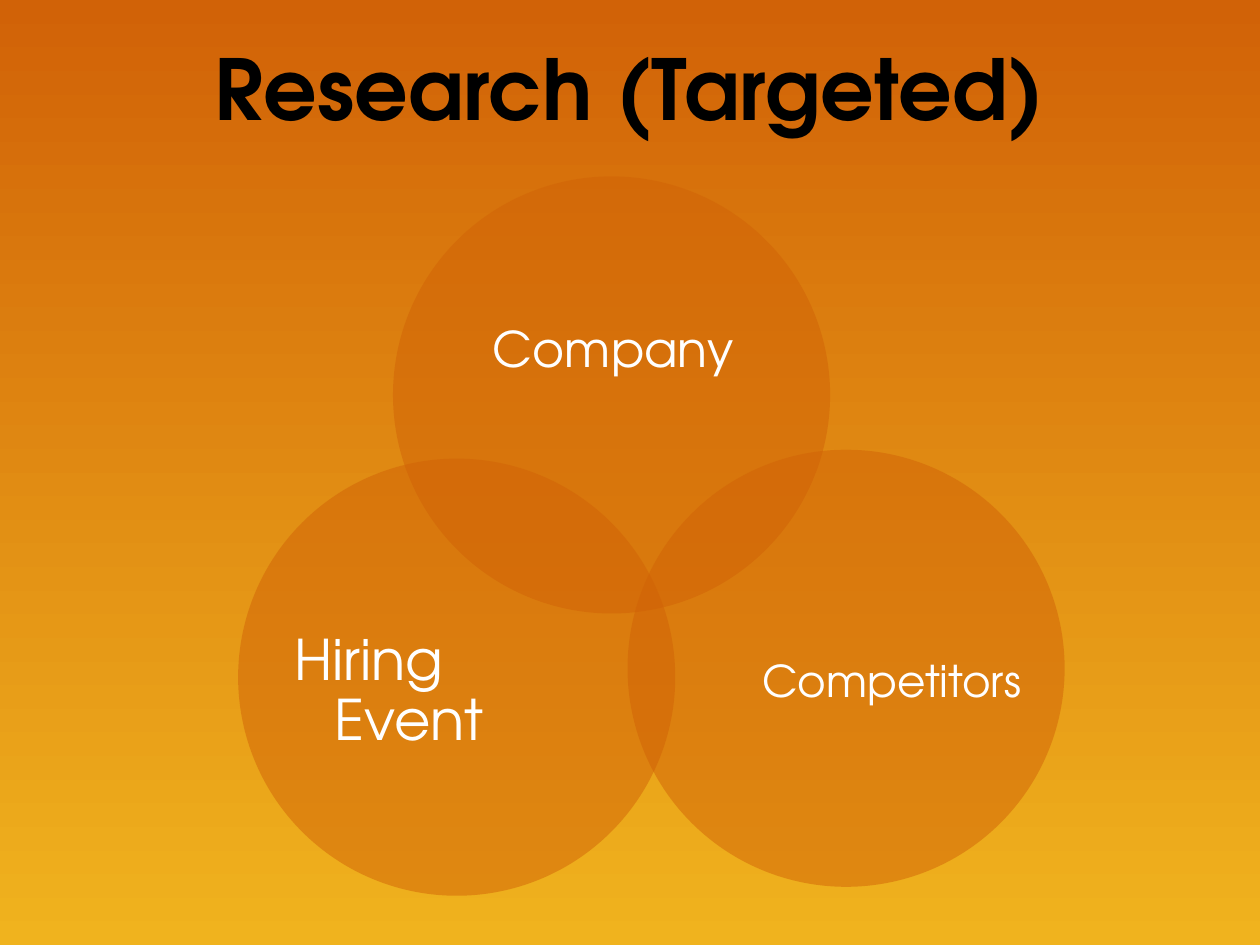
"""Build the Research (Targeted) slide: a three-circle Venn diagram."""
from lxml import etree
from pptx import Presentation
from pptx import util as u
from pptx.dml.color import RGBColor
from pptx.enum import shapes, text
from pptx.oxml.ns import qn

COLORS = {"orange": "D16207", "gold": "F0B31E", "black": "000000", "white": "FFFFFF"}
FONT = "TeX Gyre Adventor"
TITLE = ("Research (Targeted)", (61.2, 7.2, 596.9, 90))
DIAMETER = 249.8
CENTER, LEFT = text.PP_ALIGN.CENTER, text.PP_ALIGN.LEFT
CIRCLES = [
    {"at": (224.6, 100.8), "label": "Company", "box": (258.5, 144.7, 183.6, 112.3),
     "fmt": {"size": 28}},
    {"at": (358.6, 257), "label": "Competitors", "box": (435.6, 321.8, 149.8, 137.5),
     "fmt": {"size": 25, "align": LEFT}},
    {"at": (136.1, 262.1), "label": "Hiring Event", "box": (159.1, 326.9, 149.8, 137.5),
     "fmt": {"size": 32, "align": LEFT, "margin": 32, "indent": -23}},
]


def rgb(name):
    return RGBColor.from_string(COLORS[name])


def add_text(sp, content, size, color="white", bold=False, align=CENTER,
             spacing=0.9, inset=0, margin=0, indent=0):
    tf = sp.text_frame
    tf.word_wrap = True
    tf.vertical_anchor = text.MSO_ANCHOR.MIDDLE
    tf.margin_left = tf.margin_right = u.Pt(inset)
    tf.margin_top = tf.margin_bottom = u.Pt(inset / 2)
    p = tf.paragraphs[0]
    p.alignment, p.line_spacing = align, spacing
    if margin:
        pPr = p._p.get_or_add_pPr()
        pPr.set("marL", str(u.Pt(margin)))
        pPr.set("indent", str(u.Pt(indent)))
    r = p.add_run()
    r.text = content
    r.font.name, r.font.size, r.font.bold = FONT, u.Pt(size), bold
    r.font.color.rgb = rgb(color)


def add_circle(s, at):
    sp = s.shapes.add_shape(shapes.MSO_SHAPE.OVAL, *map(u.Pt, (*at, DIAMETER, DIAMETER)))
    sp.shadow.inherit = False
    sp.line.fill.background()
    sp.fill.solid()
    sp.fill.fore_color.rgb = rgb("orange")
    clr = sp._element.spPr.find(qn("a:solidFill"))[0]
    etree.SubElement(clr, qn("a:alpha"), val="50000")


def main():
    prs = Presentation()
    prs.slide_width, prs.slide_height = u.Pt(720), u.Pt(540)
    s = prs.slides.add_slide(prs.slide_layouts[6])

    fill = s.background.fill
    fill.gradient()
    fill.gradient_angle = 270
    for stop, position, color in zip(fill.gradient_stops, (0, 1), ("orange", "gold")):
        stop.position = position
        stop.color.rgb = rgb(color)

    content, box = TITLE
    add_text(s.shapes.add_textbox(*map(u.Pt, box)), content, size=48,
             color="black", bold=True, spacing=0.95, inset=7.2)
    for circle in CIRCLES:
        add_circle(s, circle["at"])
        add_text(s.shapes.add_textbox(*map(u.Pt, circle["box"])),
                 circle["label"], **circle["fmt"])
    prs.save("out.pptx")


if __name__ == "__main__":
    main()
